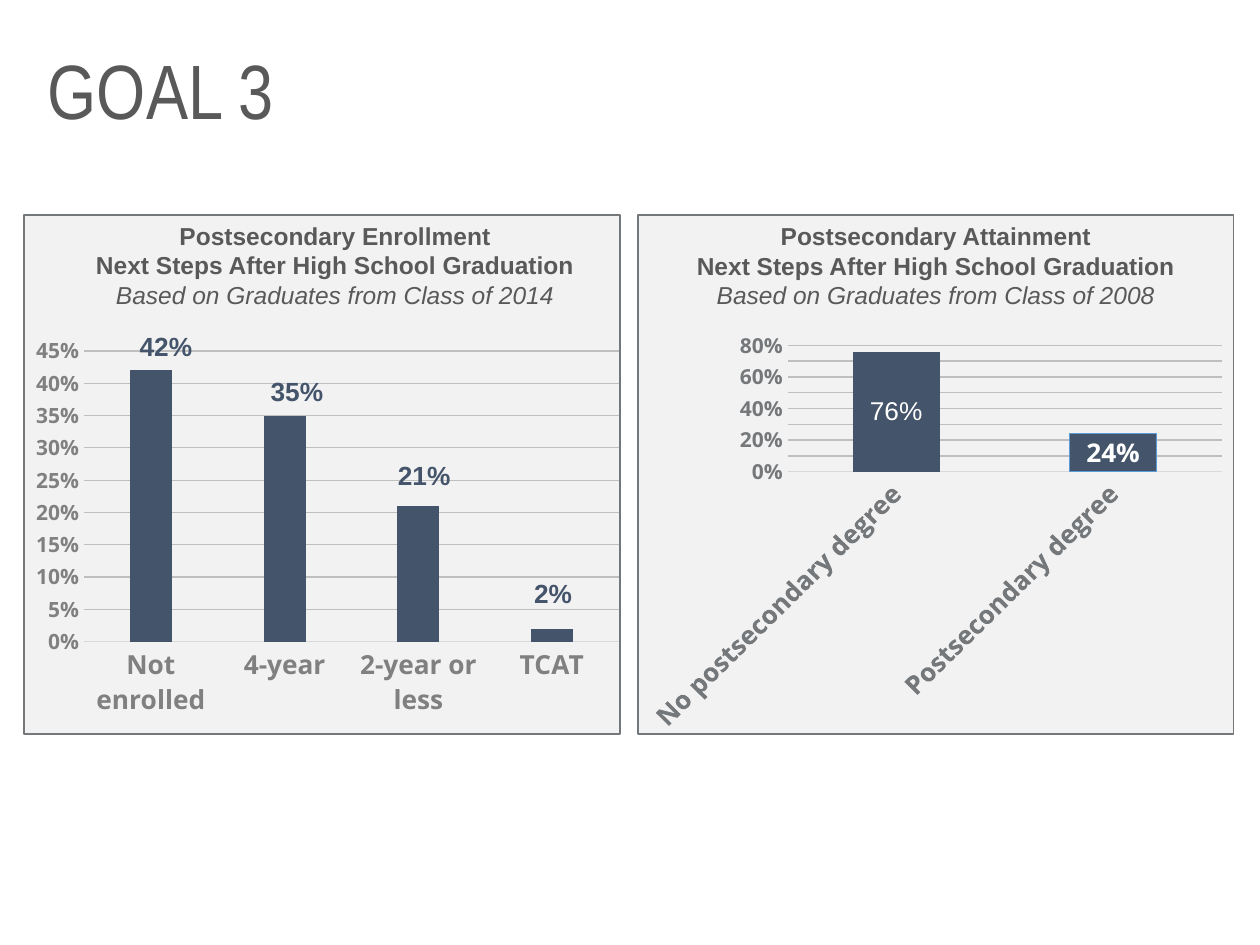
import copy

import pptx
import pptx.chart.data
import pptx.dml.color
import pptx.enum.chart
import pptx.enum.shapes
import pptx.enum.text
import pptx.oxml.ns
import pptx.util

Pt = pptx.util.Pt
ChartType = pptx.enum.chart.XL_CHART_TYPE
NAVY, INK, WHITE = "44546A", "595959", "FFFFFF"
PANEL_WIDTH, PANEL_HEIGHT = 340.5, 296.6


def color(value):
    return pptx.dml.color.RGBColor.from_string(value)


def set_font(font, name, size, value, bold=False):
    font.name = name
    font.size = Pt(size)
    font.color.rgb = color(value)
    font.bold = bold


def set_line(line, value, width):
    line.color.rgb = color(value)
    line.width = Pt(width)


def add_text(slide, box, text, name, size, value, bold=False):
    shape = slide.shapes.add_textbox(*map(Pt, box))
    shape.text_frame.word_wrap = True
    paragraph = shape.text_frame.paragraphs[0]
    paragraph.text = text
    for run in paragraph.runs:
        set_font(run.font, name, size, value, bold)
    for line_break in paragraph._p.findall(pptx.oxml.ns.qn("a:br")):
        line_break.append(copy.deepcopy(paragraph.runs[0]._r.rPr))
    return shape


def add_title(slide, box, text):
    shape = add_text(slide, box, text, "Arial Narrow", 44, INK)
    shape.text_frame.vertical_anchor = pptx.enum.text.MSO_ANCHOR.MIDDLE
    shape.text_frame.paragraphs[0].line_spacing = 0.9


def add_panel(slide, left, top):
    shape = slide.shapes.add_shape(
        pptx.enum.shapes.MSO_SHAPE.RECTANGLE,
        *map(Pt, (left, top, PANEL_WIDTH, PANEL_HEIGHT)))
    shape.shadow.inherit = False
    shape.fill.solid()
    shape.fill.fore_color.rgb = color("F2F2F2")
    set_line(shape.line, "75787B", 1)


def add_heading(slide, left, top, subject, year):
    text = "\v".join([
        f"Postsecondary {subject}",
        "Next Steps After High School Graduation",
        f"Based on Graduates from Class of {year}"])
    shape = add_text(slide, (left, top, 325.4, 58.3), text, "Arial", 14, INK, True)
    paragraph = shape.text_frame.paragraphs[0]
    paragraph.alignment = pptx.enum.text.PP_ALIGN.CENTER
    paragraph.runs[-1].font.bold = False
    paragraph.runs[-1].font.italic = True


def add_column_chart(slide, box, kind, values, axis_color, scale, gap, overlap):
    data = pptx.chart.data.CategoryChartData(number_format="0%")
    data.categories = list(values)
    data.add_series("Series 1", list(values.values()))
    chart = slide.shapes.add_chart(kind, *map(Pt, box), data).chart
    chart.has_legend = False
    chart.has_title = False
    set_font(chart.font, "Open Sans", 12, "000000", True)
    for axis, size in ((chart.category_axis, 15), (chart.value_axis, 12)):
        axis.major_tick_mark = pptx.enum.chart.XL_TICK_MARK.NONE
        set_font(axis.tick_labels.font, "Open Sans", size, axis_color, True)
    set_line(chart.category_axis.format.line, "D9D9D9", 0.75)
    value_axis = chart.value_axis
    value_axis.format.line.fill.background()
    value_axis.has_major_gridlines = True
    set_line(value_axis.major_gridlines.format.line, "BFBFBF", 0.75)
    value_axis.tick_labels.number_format = "0%"
    value_axis.tick_labels.number_format_is_linked = False
    value_axis.minimum_scale = 0
    value_axis.maximum_scale, value_axis.major_unit = scale
    plot = chart.plots[0]
    plot.gap_width = gap
    plot.overlap = overlap
    plot.vary_by_categories = False
    fill = plot.series[0].format.fill
    fill.solid()
    fill.fore_color.rgb = color(NAVY)
    return chart


def add_enrollment(slide, left, top):
    add_panel(slide, left, top)
    values = {"Not enrolled": 0.42, "4-year": 0.35, "2-year or less": 0.21, "TCAT": 0.02}
    add_column_chart(
        slide, (left, top + 65, 347, 226.8), ChartType.COLUMN_CLUSTERED, values,
        "808080", (0.45, 0.05), 219, -27)
    add_heading(slide, left + 15.1, top - 0.1, "Enrollment", 2014)
    label_places = [(59, 62.2), (133.9, 88.3), (206.6, 136), (284.4, 203.3)]
    for value, (x, y) in zip(values.values(), label_places):
        add_text(slide, (left + x, top + y, 53.3, 25.2), f"{value:.0%}", "Arial", 15, NAVY, True)


def add_attainment(slide, left, top):
    add_panel(slide, left, top)
    add_heading(slide, left + 7.7, top, "Attainment", 2008)
    values = {"No postsecondary degree": 0.76, "Postsecondary degree": 0.24}
    chart = add_column_chart(
        slide, (left - 2.2, top + 66.4, 342.7, 229.7), ChartType.COLUMN_STACKED, values,
        "75787B", (0.8, 0.1), 150, 100)
    label_body = chart.category_axis._element.txPr.find(pptx.oxml.ns.qn("a:bodyPr"))
    label_body.set("rot", "-2700000")
    label_body.set("vert", "horz")
    series = chart.plots[0].series[0]
    labels = series.data_labels
    labels.show_value = True
    labels.number_format = "0%"
    labels.number_format_is_linked = False
    set_font(labels.font, "Open Sans", 15, WHITE, True)
    paragraph = series.points[0].data_label.text_frame.paragraphs[0]
    paragraph.text = "76%"
    set_font(paragraph.runs[0].font, "Arial", 15, WHITE)
    degree_format = series.points[1].format
    degree_format.fill.solid()
    degree_format.fill.fore_color.rgb = color(NAVY)
    set_line(degree_format.line, "5B9BD5", 0.5)


def main():
    presentation = pptx.Presentation()
    presentation.slide_width = Pt(720)
    presentation.slide_height = Pt(540)
    slide = presentation.slides.add_slide(presentation.slide_layouts[6])
    add_title(slide, (20.2, 15.8, 620.6, 76.3), "GOAL 3")
    add_enrollment(slide, 13.7, 122.8)
    add_attainment(slide, 364.4, 122.8)
    presentation.save("out.pptx")


if __name__ == "__main__":
    main()
